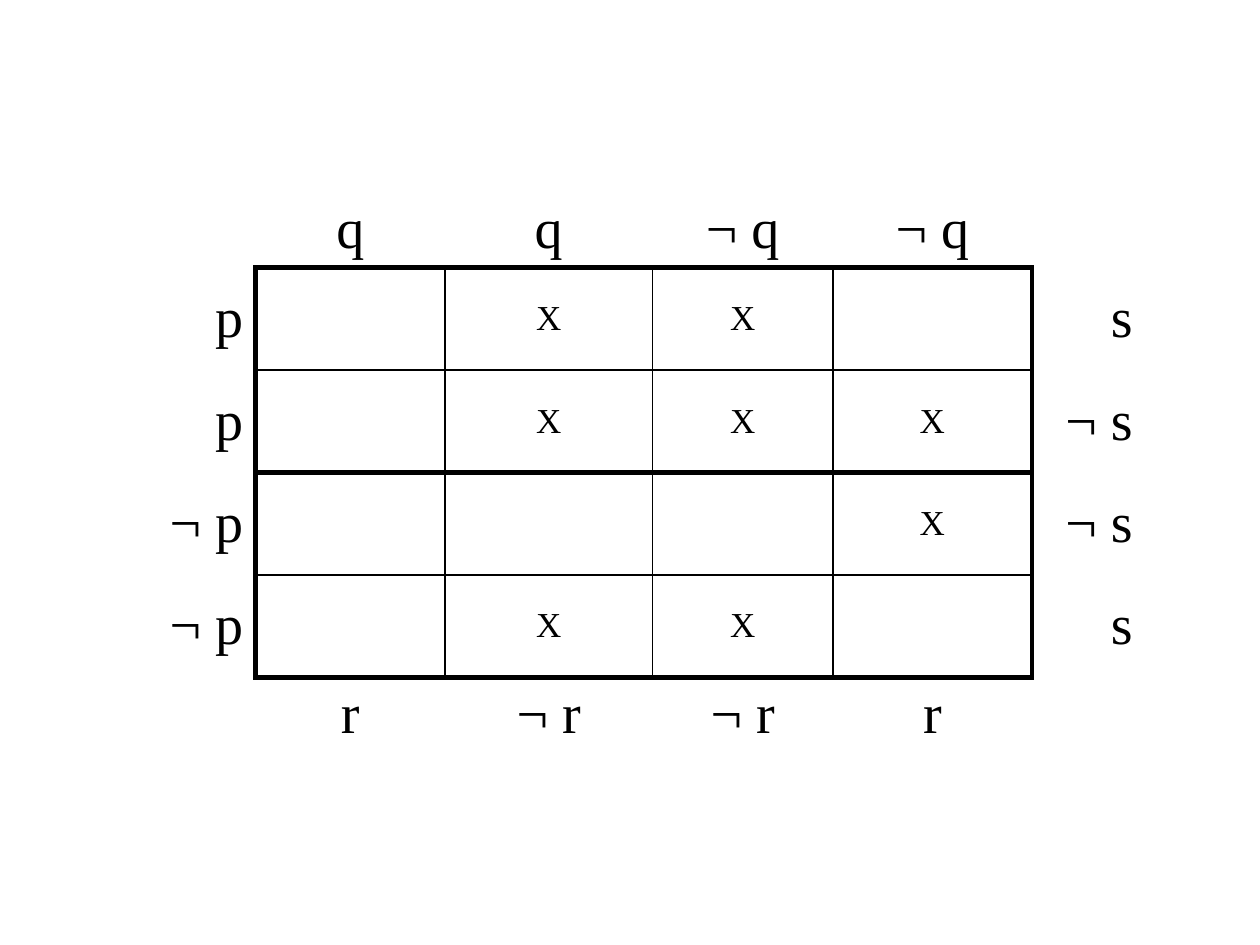
from lxml import etree
from pptx import Presentation
from pptx.dml.color import RGBColor
from pptx.enum.text import MSO_ANCHOR, PP_ALIGN
from pptx.oxml.ns import qn
from pptx.util import Inches, Pt

TOP, MIDDLE, BOTTOM = MSO_ANCHOR.TOP, MSO_ANCHOR.MIDDLE, MSO_ANCHOR.BOTTOM
CENTER, RIGHT = PP_ALIGN.CENTER, PP_ALIGN.RIGHT
COLORS = {"ink": "000000"}
FONT = "Times New Roman"
NO_STYLE = "{2D5ABB26-0587-4C30-8999-92F81FD0307C}"
THICK, THIN = 3, 1

# Karnaugh map: variable labels around a 4 x 4 grid
MAP = [
    ["", "q", "q", "¬ q", "¬ q", ""],
    ["p", "", "X", "X", "", "s"],
    ["p", "", "X", "X", "X", "¬ s"],
    ["¬ p", "", "", "", "X", "¬ s"],
    ["¬ p", "", "X", "X", "", "s"],
    ["", "r", "¬ r", "¬ r", "r", ""],
]
WIDTHS = [1.13, 1.5, 1.65, 1.43, 1.58, 0.9]
HEIGHT = 4.88

# Line weight of each grid edge, counted from the table's left or top
COLUMN_EDGES = {1: THICK, 2: THIN, 3: THIN, 4: THIN, 5: THICK}
ROW_EDGES = {1: THICK, 2: THIN, 3: THICK, 4: THIN, 5: THICK}
INNER = range(1, 5)


def add_border(cell, side, weight):
    line = etree.SubElement(cell._tc.get_or_add_tcPr(), qn("a:" + side))
    line.set("w", str(Pt(weight or 0)))
    if weight is None:
        etree.SubElement(line, qn("a:noFill"))
        return
    fill = etree.SubElement(line, qn("a:solidFill"))
    etree.SubElement(fill, qn("a:srgbClr")).set("val", COLORS["ink"])


def add_label(cell, text, size, align):
    para = cell.text_frame.paragraphs[0]
    para.alignment = align
    before = etree.SubElement(para._p.get_or_add_pPr(), qn("a:spcBef"))
    etree.SubElement(before, qn("a:spcPct")).set("val", "20000")
    span = para.add_run()
    span.text = text
    span.font.name = FONT
    span.font.size = Pt(size)
    span.font.color.rgb = RGBColor.from_string(COLORS["ink"])


deck = Presentation()
deck.slide_width, deck.slide_height = Inches(10), Inches(7.5)
page = deck.slides.add_slide(deck.slide_layouts[6])

# Plain table
frame = page.shapes.add_table(len(MAP), len(WIDTHS), Inches(0.9), Inches(1.31),
                              Inches(sum(WIDTHS)), Inches(HEIGHT))
table = frame.table
table.first_row = table.horz_banding = False
table._tbl.tblPr.find(qn("a:tableStyleId")).text = NO_STYLE
for column, width in zip(table.columns, WIDTHS):
    column.width = Inches(width)
for row in table.rows:
    row.height = Inches(HEIGHT / len(MAP))

# Cells: borders, fill and text
for r, labels in enumerate(MAP):
    for c, text in enumerate(labels):
        cell = table.cell(r, c)
        beside = COLUMN_EDGES if r in INNER else {}
        across = ROW_EDGES if c in INNER else {}
        add_border(cell, "lnL", beside.get(c))
        add_border(cell, "lnR", beside.get(c + 1))
        add_border(cell, "lnT", across.get(r))
        add_border(cell, "lnB", across.get(r + 1))
        cell.fill.background()
        cell.vertical_anchor = {0: BOTTOM, 5: TOP}.get(r, MIDDLE)
        if text:
            add_label(cell, text, 20 if text == "X" else 32,
                      CENTER if c in INNER else RIGHT)

deck.save("out.pptx")
